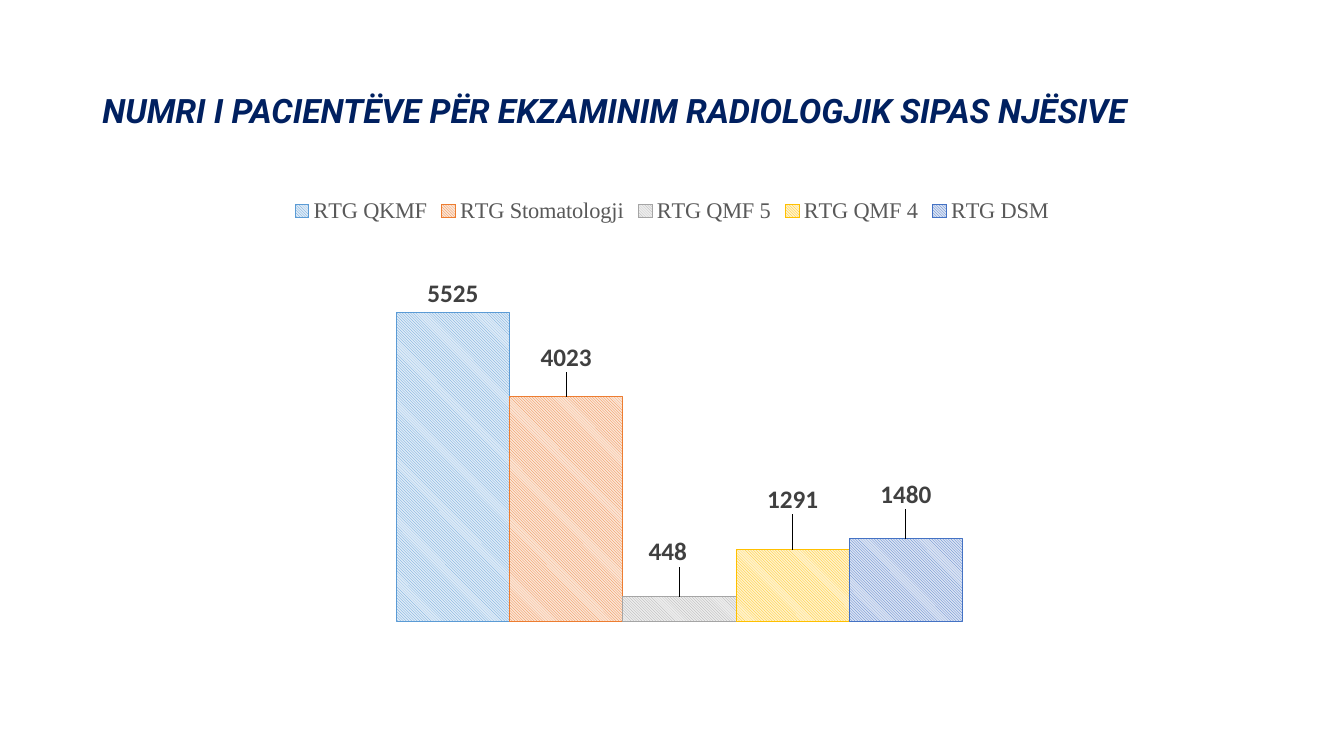
from lxml import etree
from pptx import Presentation
from pptx.chart.data import CategoryChartData
from pptx.dml.color import RGBColor
from pptx.enum.chart import XL_CHART_TYPE, XL_LABEL_POSITION, XL_LEGEND_POSITION
from pptx.enum.dml import MSO_PATTERN
from pptx.enum.text import MSO_ANCHOR
from pptx.oxml.ns import qn
from pptx.util import Cm, Pt

COLUMNS = XL_CHART_TYPE.COLUMN_CLUSTERED
OUTSIDE = XL_LABEL_POSITION.OUTSIDE_END
LEGEND_TOP = XL_LEGEND_POSITION.TOP
DIAGONAL = MSO_PATTERN.LIGHT_DOWNWARD_DIAGONAL
MIDDLE = MSO_ANCHOR.MIDDLE

TITLE = "NUMRI I PACIENTËVE PËR EKZAMINIM RADIOLOGJIK SIPAS NJËSIVE"

# Unit, patients, line colour, background colour, label shift (share of chart)
UNITS = [
    ("RTG QKMF", 5525, "5B9BD5", "DEEBF7", None),
    ("RTG Stomatologji", 4023, "ED7D31", "FBE5D6", (0, -0.04)),
    ("RTG QMF 5", 448, "A5A5A5", "EDEDED", (-0.01, -0.05)),
    ("RTG QMF 4", 1291, "FFC000", "FFF2CC", (0, -0.06)),
    ("RTG DSM", 1480, "4472C4", "DAE3F3", (0, -0.05)),
]


def rgb(value):
    return RGBColor.from_string(value)


def set_font(font, name, size, color, bold=False, italic=False):
    font.name = name
    font.size = Pt(size)
    font.color.rgb = rgb(color)
    font.bold = bold
    font.italic = italic


def add_title(s, text, left, top, width, height):
    tf = s.shapes.add_textbox(left, top, width, height).text_frame
    tf.word_wrap = True
    tf.vertical_anchor = MIDDLE
    p = tf.paragraphs[0]
    p.line_spacing = 0.9
    r = p.add_run()
    r.text = text
    set_font(r.font, "Roboto", 24, "002060", bold=True, italic=True)


def manual_layout(**settings):
    layout = etree.Element(qn("c:layout"))
    manual = etree.SubElement(layout, qn("c:manualLayout"))
    for tag, value in settings.items():
        etree.SubElement(manual, qn(f"c:{tag}")).set("val", str(value))
    return layout


def set_plot_area(chart, x, y, w, h):
    area = chart.plots[0]._element.getparent()
    for old in area.findall(qn("c:layout")):
        area.remove(old)
    area.insert(0, manual_layout(layoutTarget="inner", xMode="edge",
                                 yMode="edge", x=x, y=y, w=w, h=h))


def style_series(series, line, back, shift):
    # Hatched column
    fill = series.format.fill
    fill.patterned()
    fill.pattern = DIAGONAL
    fill.fore_color.rgb = rgb(line)
    fill.back_color.rgb = rgb(back)
    series.format.line.color.rgb = rgb(line)
    series.format.line.width = Pt(0.75)

    # Value label, moved where needed
    labels = series.data_labels
    labels.show_value = True
    labels.position = OUTSIDE
    set_font(labels.font, "Calibri", 18, "404040", bold=True)
    if shift:
        label = series.points[0].data_label
        label.position = OUTSIDE
        set_font(label.font, "Calibri", 18, "404040", bold=True)
        element = labels._element.find(qn("c:dLbl"))
        element.insert(1, manual_layout(x=shift[0], y=shift[1]))


def add_unit_chart(s, units, left, top, width, height):
    data = CategoryChartData()
    data.categories = ["1"]
    for name, patients, *_ in units:
        data.add_series(name, [patients])
    chart = s.shapes.add_chart(COLUMNS, left, top, width, height, data).chart
    set_font(chart.font, "Calibri", 10, "000000")
    chart.has_title = False

    # Legend
    chart.has_legend = True
    chart.legend.position = LEGEND_TOP
    chart.legend.include_in_layout = False
    set_font(chart.legend.font, "Times New Roman", 16, "595959")

    # Axes and plot
    chart.category_axis.visible = False
    axis = chart.value_axis
    axis.visible = False
    axis.has_major_gridlines = False
    axis.minimum_scale = 0
    axis.maximum_scale = 6000
    plot = chart.plots[0]
    plot.gap_width = 160
    plot.overlap = 0
    plot.vary_by_categories = False
    set_plot_area(chart, 0.184, 0.197, 0.645, 0.664)

    for series, (_, _, line, back, shift) in zip(plot.series, units):
        style_series(series, line, back, shift)


def main():
    prs = Presentation()
    prs.slide_width, prs.slide_height = Cm(33.87), Cm(19.05)
    s = prs.slides.add_slide(prs.slide_layouts[6])
    left, width = Cm(2.33), Cm(29.21)
    add_title(s, TITLE, left, Cm(1.01), width, Cm(3.68))
    add_unit_chart(s, UNITS, left, Cm(4.7), width, Cm(12.73))
    prs.save("out.pptx")


if __name__ == "__main__":
    main()
